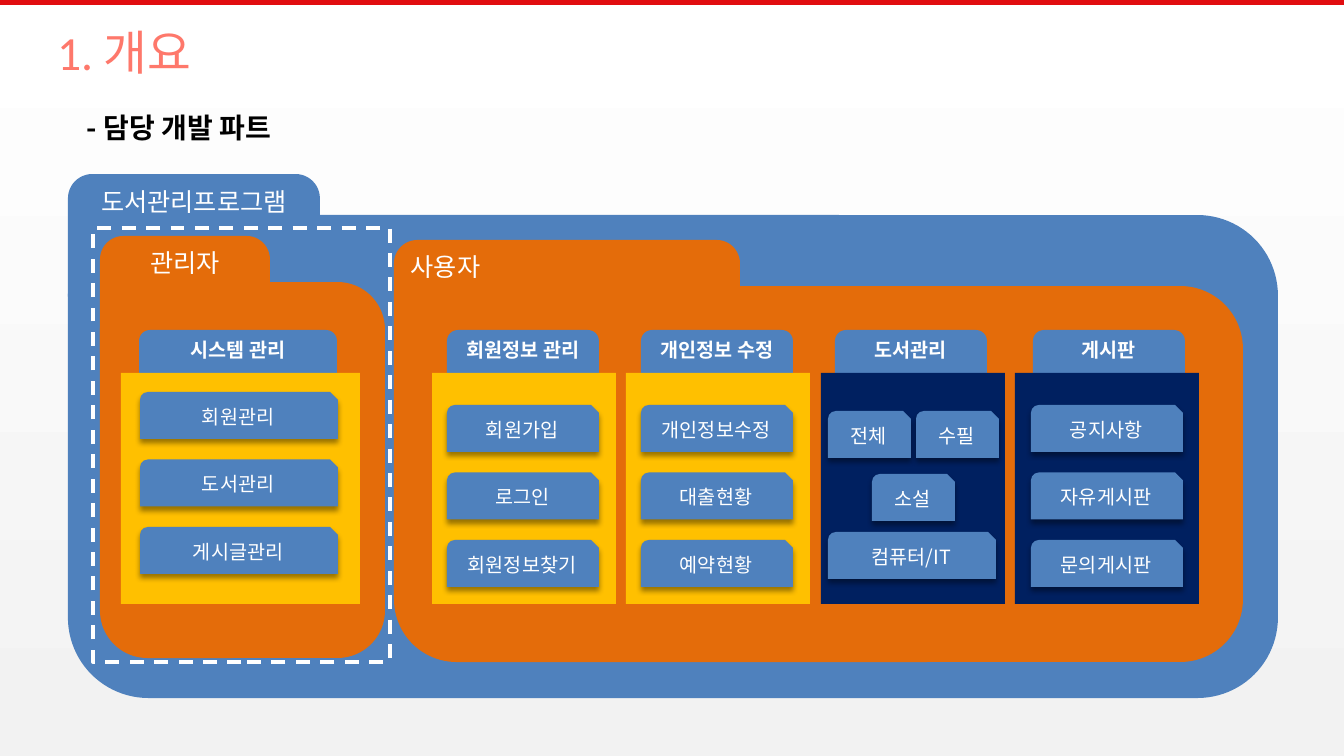
"""Build the slide showing which parts of the library program were developed."""
from lxml.etree import SubElement
from pptx import Presentation
from pptx.dml.color import RGBColor as RGB
from pptx.enum.dml import MSO_LINE as Dash
from pptx.enum.shapes import MSO_SHAPE as Kind
from pptx.enum.text import MSO_ANCHOR as Anchor, PP_ALIGN as Align
from pptx.oxml.ns import qn
from pptx.util import Pt

PX = 914400 / 100.8
SANS = "Noto Sans CJK KR"
COLORS = {
    "red": "E10D10", "coral": "FE786B", "blue": "4F81BD", "orange": "E46C0A",
    "gold": "FFC000", "navy": "002060", "white": "FFFFFF", "black": "000000",
    "pale": "F2F2F2",
}
TITLE = "1. 개요"
LEAD = "- 담당 개발 파트"
FOLDERS = [
    ("도서관리프로그램", "blue", Align.CENTER, (68, 174, 252, 146), (68, 215, 1210, 483)),
    ("사용자", "orange", Align.LEFT, (394, 240, 346, 140), (394, 286, 849, 376)),
    ("관리자", "orange", Align.CENTER, (100, 236, 170, 140), (100, 282, 285, 376)),
]
PANELS = [
    ("시스템 관리", "gold", 139, 198, 121, 239),
    ("회원정보 관리", "gold", 447, 152, 432, 184),
    ("개인정보 수정", "gold", 641, 152, 626, 184),
    ("도서관리", "navy", 835, 152, 821, 184),
    ("게시판", "navy", 1033, 152, 1015, 184),
]
STACKS = {
    "시스템 관리": (140, 392, 198, ["회원관리", "도서관리", "게시글관리"]),
    "회원정보 관리": (447, 405, 152, ["회원가입", "로그인", "회원정보찾기"]),
    "개인정보 수정": (641, 405, 152, ["개인정보수정", "대출현황", "예약현황"]),
    "게시판": (1031, 405, 152, ["공지사항", "자유게시판", "문의게시판"]),
}
BOOKS = [
    ("전체", 828, 411, 83), ("수필", 916, 411, 83),
    ("소설", 872, 474, 83), ("컴퓨터/IT", 828, 532, 168),
]
TAB_Y, TAB_H = 330, 66
BOX_Y, BOX_H = 373, 231
CARD_H, PITCH = 47, 67.5


def color(name):
    return RGB.from_string(COLORS[name])


def place(box):
    return [round(v * PX) for v in box]


def write(shape, text, size, tint="white", bold=False, align=Align.CENTER,
          anchor=Anchor.TOP, face=SANS):
    frame = shape.text_frame
    frame.word_wrap = True
    frame.vertical_anchor = anchor
    para = frame.paragraphs[0]
    para.text = text
    para.alignment = align
    font = para.font
    font.size, font.bold, font.name = Pt(size), bold, face
    font.color.rgb = color(tint)
    props = para._p.pPr.find(qn("a:defRPr"))
    SubElement(props, qn("a:ea"), typeface=SANS)


def block(parent, kind, box, fill=None):
    shape = parent.add_shape(kind, *place(box))
    shape.shadow.inherit = False
    shape.line.fill.background()
    if fill:
        shape.fill.solid()
        shape.fill.fore_color.rgb = color(fill)
    else:
        shape.fill.background()
    return shape


def card(parent, text, x, y, w):
    shape = block(parent, Kind.SNIP_ROUND_RECTANGLE, (x, y, w, CARD_H), "blue")
    write(shape, text, 14, anchor=Anchor.MIDDLE)
    effects = shape._element.spPr.find(qn("a:effectLst"))
    shade = SubElement(effects, qn("a:outerShdw"), blurRad=str(Pt(4)),
                       dist=str(Pt(3)), dir="5400000", algn="t", rotWithShape="0")
    tone = SubElement(shade, qn("a:srgbClr"), val=COLORS["black"])
    SubElement(tone, qn("a:alpha"), val="40000")


def folder(shapes, name, fill, align, tab, body):
    group = shapes.add_group_shape().shapes
    block(group, Kind.ROUNDED_RECTANGLE, body, fill)
    write(block(group, Kind.ROUNDED_RECTANGLE, tab, fill), name, 18, align=align)


def panel(shapes, name, fill, tab_x, tab_w, box_x, box_w):
    group = shapes.add_group_shape().shapes
    tab = block(group, Kind.ROUNDED_RECTANGLE, (tab_x, TAB_Y, tab_w, TAB_H), "blue")
    write(tab, name, 14, bold=True)
    block(group, Kind.RECTANGLE, (box_x, BOX_Y, box_w, BOX_H), fill)
    if name in STACKS:
        x, y, w, items = STACKS[name]
        cards = [(item, x, y + i * PITCH, w) for i, item in enumerate(items)]
    else:
        cards = BOOKS
    for item in cards:
        card(group, *item)


def main():
    deck = Presentation()
    deck.slide_width, deck.slide_height = place((1344, 756))
    slide = deck.slides.add_slide(deck.slide_layouts[5])
    shapes = slide.shapes

    back = slide.background.fill
    back.gradient()
    back.gradient_angle = 270
    for stop, name in zip(back.gradient_stops, ("white", "pale")):
        stop.color.rgb = color(name)

    block(shapes, Kind.RECTANGLE, (0, 0, 1344, 5), "red")
    title = shapes.title
    title.left, title.top, title.width, title.height = place((47, 20, 1159, 62))
    write(title, TITLE, 34, "coral", align=Align.LEFT, anchor=Anchor.MIDDLE,
          face="Calibri")
    lead = shapes.add_textbox(*place((77, 106, 922, 44)))
    write(lead, LEAD, 20, "black", bold=True, align=Align.LEFT)

    for item in FOLDERS:
        folder(shapes, *item)
    for item in PANELS:
        panel(shapes, *item)

    frame = block(shapes, Kind.RECTANGLE, (93, 228, 297, 434))
    frame.line.color.rgb = color("white")
    frame.line.width = Pt(2.5)
    frame.line.dash_style = Dash.DASH

    deck.save("out.pptx")


if __name__ == "__main__":
    main()
